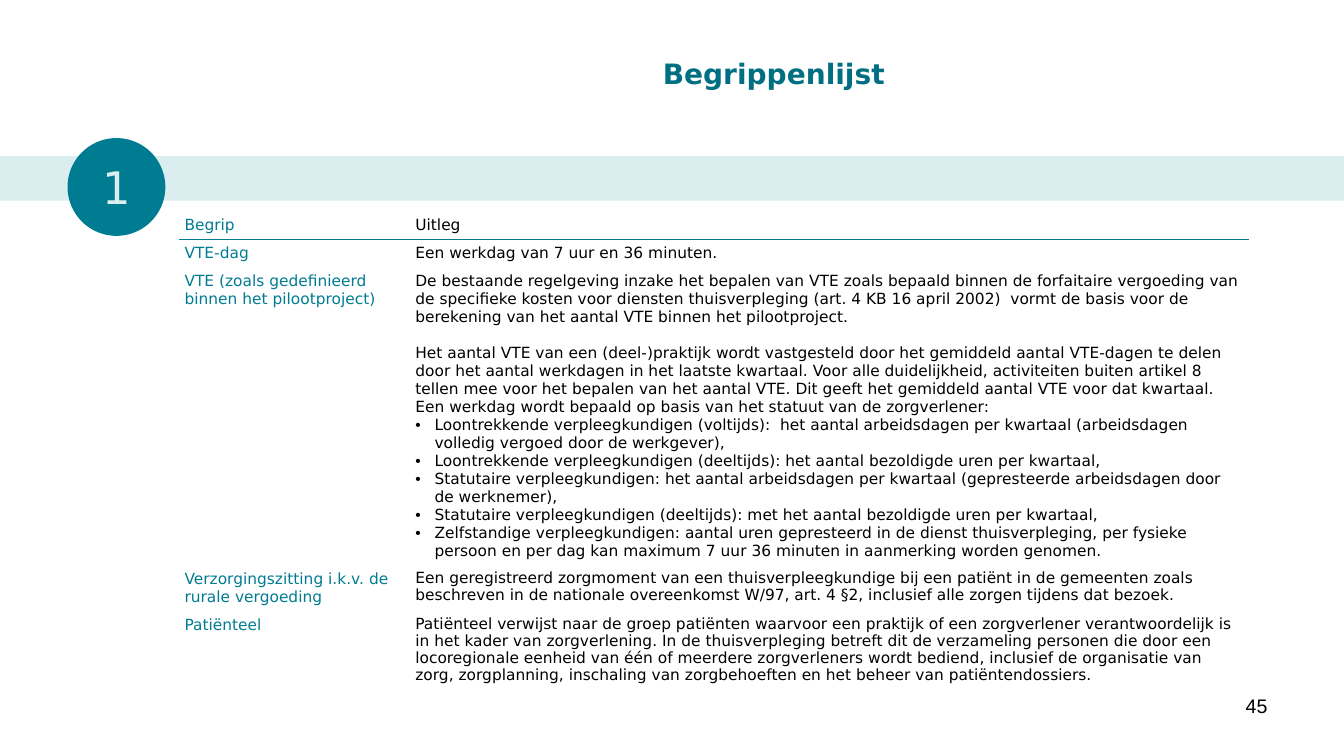
"""Builds the glossary slide "Begrippenlijst" with its table of terms."""
import pptx
import pptx.dml.color
import pptx.enum.shapes
import pptx.enum.text
import pptx.oxml
import pptx.oxml.ns
import pptx.util

RGBColor = pptx.dml.color.RGBColor
TEAL = RGBColor(0x00, 0x7C, 0x92)
DARK_TEAL = RGBColor(0x00, 0x6F, 0x82)
PALE_TEAL = RGBColor(0xDA, 0xED, 0xEF)
BLACK = RGBColor(0, 0, 0)
WHITE = RGBColor(0xFF, 0xFF, 0xFF)

PX = 9144
FONT = "DejaVu Sans"
ALIGN = pptx.enum.text.PP_ALIGN
ANCHOR = pptx.enum.text.MSO_ANCHOR
SHAPE = pptx.enum.shapes.MSO_SHAPE

TITLE = "Begrippenlijst"
CHAPTER = "1"
PAGE = "45"
BULLET = "•"
GLOSSARY = [
    ("Begrip", ["Uitleg"]),
    ("VTE-dag", ["Een werkdag van 7 uur en 36 minuten."]),
    ("VTE (zoals gedefinieerd binnen het pilootproject)", [
        "De bestaande regelgeving inzake het bepalen van VTE zoals bepaald binnen de forfaitaire "
        "vergoeding van de specifieke kosten voor diensten thuisverpleging (art. 4 KB 16 april 2002)  "
        "vormt de basis voor de berekening van het aantal VTE binnen het pilootproject.",
        "Het aantal VTE van een (deel-)praktijk wordt vastgesteld door het gemiddeld aantal VTE-dagen "
        "te delen door het aantal werkdagen in het laatste kwartaal. Voor alle duidelijkheid, "
        "activiteiten buiten artikel 8 tellen mee voor het bepalen van het aantal VTE. Dit geeft het "
        "gemiddeld aantal VTE voor dat kwartaal. Een werkdag wordt bepaald op basis van het statuut "
        "van de zorgverlener:"]),
    ("Verzorgingszitting i.k.v. de rurale vergoeding", [
        "Een geregistreerd zorgmoment van een thuisverpleegkundige bij een patiënt in de gemeenten "
        "zoals beschreven in de nationale overeenkomst W/97, art. 4 §2, inclusief alle zorgen tijdens "
        "dat bezoek."]),
    ("Patiënteel", [
        "Patiënteel verwijst naar de groep patiënten waarvoor een praktijk of een zorgverlener "
        "verantwoordelijk is in het kader van zorgverlening. In de thuisverpleging betreft dit de "
        "verzameling personen die door een locoregionale eenheid van één of meerdere zorgverleners "
        "wordt bediend, inclusief de organisatie van zorg, zorgplanning, inschaling van zorgbehoeften "
        "en het beheer van patiëntendossiers."]),
]
STATUTES_ROW = 2
STATUTES = [
    "Loontrekkende verpleegkundigen (voltijds):  het aantal arbeidsdagen per kwartaal (arbeidsdagen "
    "volledig vergoed door de werkgever),",
    "Loontrekkende verpleegkundigen (deeltijds): het aantal bezoldigde uren per kwartaal,",
    "Statutaire verpleegkundigen: het aantal arbeidsdagen per kwartaal (gepresteerde arbeidsdagen "
    "door de werknemer),",
    "Statutaire verpleegkundigen (deeltijds): met het aantal bezoldigde uren per kwartaal,",
    "Zelfstandige verpleegkundigen: aantal uren gepresteerd in de dienst thuisverpleging, per fysieke "
    "persoon en per dag kan maximum 7 uur 36 minuten in aanmerking worden genomen.",
]
COLUMN_WIDTHS = [229, 831]
ROW_HEIGHTS = [28, 28, 280, 46, 92]
TIGHT_ROWS = (3, 4)
CELL_MARGIN = 5
BULLET_INDENT = 19


def box(*lengths):
    return [length * PX for length in lengths]


def style(paragraph, size, color, name=FONT, bold=False):
    font = paragraph.font
    font.size, font.name, font.bold = pptx.util.Pt(size), name, bold
    font.color.rgb = color


def write(frame, text, align, anchor, **look):
    frame.word_wrap = True
    frame.vertical_anchor = anchor
    paragraph = frame.paragraphs[0]
    paragraph.text = text
    paragraph.alignment = align
    style(paragraph, **look)


def add_plain_shape(slide, kind, place, color):
    shape = slide.shapes.add_shape(kind, *box(*place))
    shape.shadow.inherit = False
    shape.fill.solid()
    shape.fill.fore_color.rgb = color
    shape.line.fill.background()
    return shape


def add_bullet(paragraph):
    properties = paragraph._p.get_or_add_pPr()
    properties.set("marL", str(BULLET_INDENT * PX))
    properties.set("indent", str(-BULLET_INDENT * PX))
    properties.append(pptx.oxml.parse_xml(
        f'<a:buFont {pptx.oxml.ns.nsdecls("a")} typeface="Arial"/>'))
    properties.append(pptx.oxml.parse_xml(
        f'<a:buChar {pptx.oxml.ns.nsdecls("a")} char="{BULLET}"/>'))


def add_border(cell, side, color, points):
    cell._tc.get_or_add_tcPr().append(pptx.oxml.parse_xml(
        f'<a:{side} {pptx.oxml.ns.nsdecls("a")} w="{pptx.util.Pt(points)}">'
        f'<a:solidFill><a:srgbClr val="{color}"/></a:solidFill></a:{side}>'))


def fill_cell(cell, row, texts, bullets, color):
    if row < 2:
        add_border(cell, ("lnB", "lnT")[row], TEAL, 0.5)
    cell.fill.solid()
    cell.fill.fore_color.rgb = WHITE
    cell.margin_left = cell.margin_right = CELL_MARGIN * PX
    cell.margin_top = cell.margin_bottom = CELL_MARGIN * PX
    for index, text in enumerate(texts + bullets):
        frame = cell.text_frame
        paragraph = frame.add_paragraph() if index else frame.paragraphs[0]
        paragraph.text = text
        if index == 1:
            paragraph.space_before = pptx.util.Pt(12.8)
        if index >= len(texts):
            add_bullet(paragraph)
        style(paragraph, 11, color)


def add_glossary(slide):
    place = box(178, 209, sum(COLUMN_WIDTHS), sum(ROW_HEIGHTS))
    table = slide.shapes.add_table(len(GLOSSARY), len(COLUMN_WIDTHS), *place).table
    table.first_row = table.horz_banding = False
    for column, width in zip(table.columns, COLUMN_WIDTHS):
        column.width = width * PX
    for row, (term, explanation) in enumerate(GLOSSARY):
        table.rows[row].height = ROW_HEIGHTS[row] * PX
        bullets = STATUTES if row == STATUTES_ROW else []
        fill_cell(table.cell(row, 0), row, [term], [], TEAL)
        fill_cell(table.cell(row, 1), row, explanation, bullets, BLACK)
        if row in TIGHT_ROWS:
            table.cell(row, 1).text_frame.paragraphs[0].line_spacing = pptx.util.Pt(12.2)


def main():
    deck = pptx.Presentation()
    deck.slide_width, deck.slide_height = box(1333, 750)
    slide = deck.slides.add_slide(deck.slide_layouts[6])

    add_plain_shape(slide, SHAPE.RECTANGLE, (0, 155, 1333, 44), PALE_TEAL)
    add_glossary(slide)
    title = slide.shapes.add_textbox(*box(268, 30, 999, 85))
    write(title.text_frame, TITLE, ALIGN.CENTER, ANCHOR.MIDDLE, size=20, color=DARK_TEAL, bold=True)
    page = slide.shapes.add_textbox(*box(956, 683, 311, 52))
    write(page.text_frame, PAGE, ALIGN.RIGHT, ANCHOR.TOP, size=14, color=BLACK, name="Arial")
    chapter = add_plain_shape(slide, SHAPE.OVAL, (67, 137, 97, 97), TEAL)
    write(chapter.text_frame, CHAPTER, ALIGN.CENTER, ANCHOR.MIDDLE, size=32, color=PALE_TEAL)

    deck.save("out.pptx")


if __name__ == "__main__":
    main()
